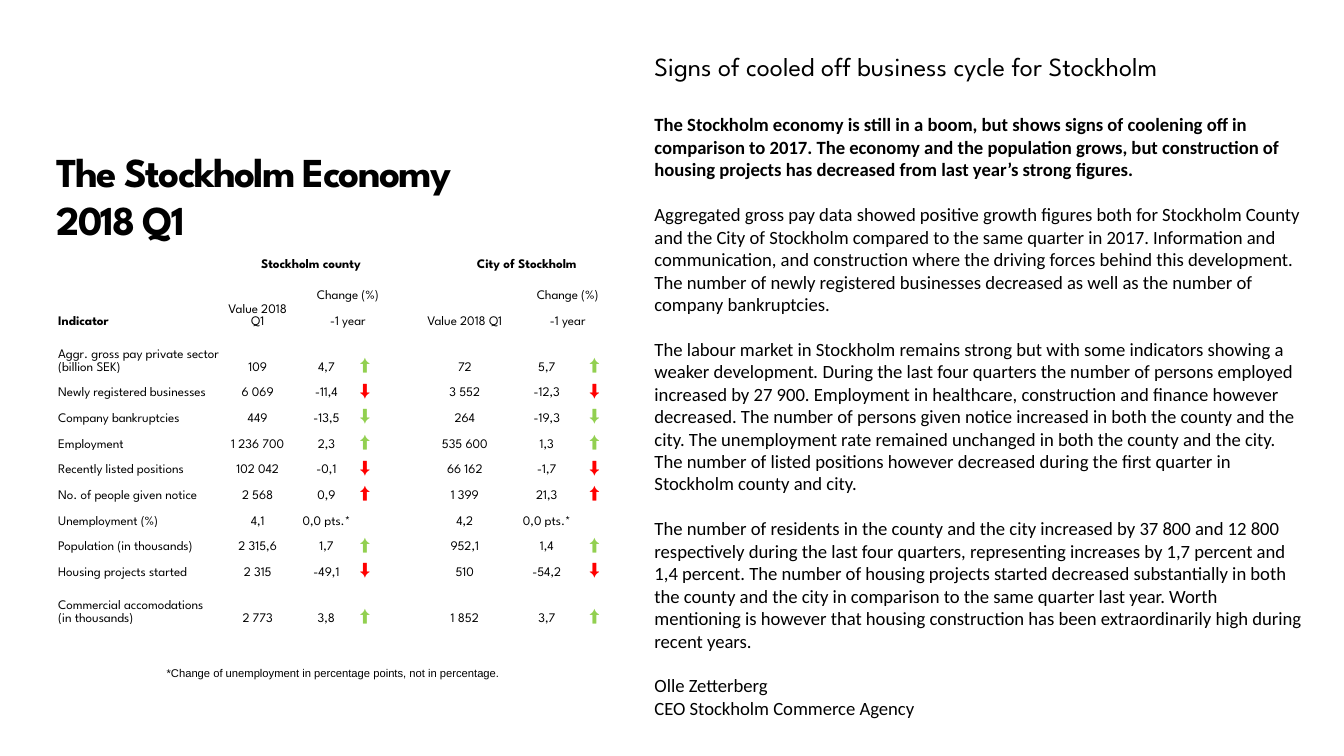
from dataclasses import dataclass

from pptx import Presentation
from pptx import util as u
from pptx.dml.color import RGBColor
from pptx.enum import text


@dataclass(frozen=True)
class Theme:
    black: RGBColor = RGBColor(0, 0, 0)
    good: RGBColor = RGBColor(0x92, 0xD0, 0x50)
    bad: RGBColor = RGBColor(0xFF, 0, 0)
    display: str = "League Spartan"
    body: str = "Calibri"
    plain: str = "Arial"
    title_size: int = 22
    heading_size: int = 14
    body_size: int = 10
    arrow_size: int = 9
    table_size: int = 7
    note_size: int = 6


theme = Theme()


def add_run(paragraph, words, font, size, color=theme.black, bold=False, italic=False):
    run = paragraph.add_run()
    run.text = words
    run.font.name, run.font.size = font, u.Pt(size)
    run.font.color.rgb = color
    run.font.bold, run.font.italic = bold, italic
    return run


def fill_cell(cell, words="", bold=False, align=text.PP_ALIGN.CENTER,
              anchor=text.MSO_ANCHOR.BOTTOM, font=theme.display,
              size=theme.table_size, color=theme.black):
    cell.vertical_anchor = anchor
    paragraph = cell.text_frame.paragraphs[0]
    paragraph.alignment = align
    if words:
        add_run(paragraph, words, font, size, color, bold)


prs = Presentation()
prs.slide_width, prs.slide_height = u.Cm(25.4), u.Cm(14.28)
slide = prs.slides.add_slide(prs.slide_layouts[5])
LEFT = text.PP_ALIGN.LEFT

# Title
title = slide.shapes.title
title.left, title.top, title.width, title.height = u.Cm(1.07), u.Cm(2.79), u.Cm(15.77), u.Cm(2.03)
title_frame = title.text_frame
title_frame.auto_size = text.MSO_AUTO_SIZE.NONE
title_frame.vertical_anchor = text.MSO_ANCHOR.TOP
title_frame.margin_left = title_frame.margin_right = 0
title_frame.margin_top = title_frame.margin_bottom = 0
for index, words in enumerate(["The Stockholm Economy", "2018 Q1"]):
    line = title_frame.add_paragraph() if index else title_frame.paragraphs[0]
    line.alignment = LEFT
    line.line_spacing = u.Pt(25.7)
    run = add_run(line, words, theme.display, theme.title_size, bold=True)
    run.font._element.set("spc", "-90")

# Footnote under the table
note = slide.shapes.add_textbox(u.Cm(3.15), u.Cm(11.99), u.Cm(6.5), u.Cm(0.89)).text_frame
note.word_wrap = True
note.margin_left = note.margin_right = note.margin_top = note.margin_bottom = 0
note.paragraphs[0].line_spacing = u.Pt(24)
add_run(note.paragraphs[0], "*Change of unemployment in percentage points, not in percentage.",
        theme.plain, theme.note_size)

# Indicators: name, then value, change and arrow for county and for city, then arrow colour
indicators = [
    ("Aggr. gross pay private sector (billion SEK)", "109", "4,7", "72", "5,7", "⬆", theme.good),
    ("Newly registered businesses", "6 069", "-11,4", "3 552", "-12,3", "⬇", theme.bad),
    ("Company bankruptcies", "449", "-13,5", "264", "-19,3", "⬇", theme.good),
    ("Employment", "1 236 700", "2,3", "535 600", "1,3", "⬆", theme.good),
    ("Recently listed positions", "102 042", "-0,1", "66 162", "-1,7", "⬇", theme.bad),
    ("No. of people given notice", "2 568", "0,9", "1 399", "21,3", "⬆", theme.bad),
    ("Unemployment (%)", "4,1", "0,0 pts.*", "4,2", "0,0 pts.*", "", theme.black),
    ("Population (in thousands)", "2 315,6", "1,7", "952,1", "1,4", "⬆", theme.good),
    ("Housing projects started", "2 315", "-49,1", "510", "-54,2", "⬇", theme.bad),
    ("Commercial accomodations (in thousands)", "2 773", "3,8", "1 852", "3,7", "⬆", theme.good),
]
column_widths = [3.1, 1.4, 1.2, 0.81, 0.43, 1.55, 1.55, 0.79]
header_rows = 3
row_count = header_rows + len(indicators)
tall_rows, tall, table_height = (header_rows, row_count - 1), 0.86, 7.06
short = (table_height - len(tall_rows) * tall) / (row_count - len(tall_rows))

# Table grid
table = slide.shapes.add_table(row_count, len(column_widths), u.Cm(1.07), u.Cm(4.75),
                               u.Cm(sum(column_widths)), u.Cm(table_height)).table
table.first_row = table.horz_banding = False
for column, width in zip(table.columns, column_widths):
    column.width = u.Cm(width)
for index, row in enumerate(table.rows):
    row.height = u.Cm(tall if index in tall_rows else short)
    for cell in row.cells:
        cell.fill.background()
        cell.margin_left = cell.margin_right = cell.margin_top = u.Cm(0.03)
        cell.margin_bottom = 0
        # Empty cells must not stretch their row
        end = cell.text_frame.paragraphs[0]._p.get_or_add_endParaRPr()
        end.set("sz", str(theme.table_size * 100))

# Table header
table.cell(1, 0).merge(table.cell(2, 0))
fill_cell(table.cell(1, 0), "Indicator", bold=True, align=LEFT)
for first, region in [(1, "Stockholm county"), (5, "City of Stockholm")]:
    table.cell(0, first).merge(table.cell(0, first + 2))
    table.cell(1, first).merge(table.cell(2, first))
    fill_cell(table.cell(0, first), region, bold=True, anchor=text.MSO_ANCHOR.MIDDLE)
    fill_cell(table.cell(1, first), "Value 2018 Q1")
    for row, words in [(1, "Change (%)"), (2, "-1 year")]:
        table.cell(row, first + 1).merge(table.cell(row, first + 2))
        fill_cell(table.cell(row, first + 1), words)

# Table body
for row, (name, county, county_change, city, city_change, arrow, color) in enumerate(
        indicators, header_rows):
    fill_cell(table.cell(row, 0), name, align=LEFT)
    for first, value, change in [(1, county, county_change), (5, city, city_change)]:
        fill_cell(table.cell(row, first), value)
        fill_cell(table.cell(row, first + 1), change)
        fill_cell(table.cell(row, first + 2), arrow, align=LEFT,
                  font=theme.plain, size=theme.arrow_size, color=color)

# Article heading
article = slide.shapes.add_textbox(u.Cm(12.17), u.Cm(0.74), u.Cm(12.7), u.Cm(13.13)).text_frame
article.word_wrap = True
article.margin_left = article.margin_right = u.Cm(0.2)
article.margin_top = article.margin_bottom = u.Cm(0.2)
heading = article.paragraphs[0]
heading.line_spacing = u.Pt(17)
add_run(heading, "Signs of cooled off business cycle for Stockholm", theme.display, theme.heading_size)

# Article paragraphs: space before, then runs with their style
story = [
    (17, [("The Stockholm economy is still in a boom, but shows signs of coolening off in comparison "
           "to 2017. The economy and the population grows, but construction of housing projects has "
           "decreased from last year’s strong figures.", {"bold": True})]),
    (12, [("Aggregated gross pay data showed positive growth figures both for Stockholm County and "
           "the City of Stockholm compared to the same quarter in 2017. Information and "
           "communication, and construction where the driving forces behind this development. The "
           "number of newly registered businesses decreased as well as the number of company "
           "bankruptcies.", {})]),
    (12, [("The labour market in Stockholm remains strong but with some indicators showing a weaker "
           "development", {}),
          (". ", {"italic": True}),
          ("During the last four quarters the number of persons employed increased by 27 900. "
           "Employment in healthcare, construction and finance however decreased. The number of "
           "persons given notice increased in both the county and the city. The unemployment rate "
           "remained unchanged in both the county and the city. The number of listed positions "
           "however decreased during the first quarter in Stockholm county and city.", {})]),
    (12, [("The number of residents in the county and the city increased by 37 800 and 12 800 "
           "respectively during the last four quarters, representing increases by 1,7 percent and "
           "1,4 percent. The number of housing projects started decreased substantially in both the "
           "county and the city in comparison to the same quarter last year. Worth mentioning is "
           "however that housing construction has been extraordinarily high during recent years.",
           {})]),
    (12, [("Olle Zetterberg", {})]),
    (0, [("CEO Stockholm Commerce Agency", {})]),
]
for space, runs in story:
    paragraph = article.add_paragraph()
    paragraph.space_before = u.Pt(space)
    for words, style in runs:
        add_run(paragraph, words, theme.body, theme.body_size, **style)

prs.save("out.pptx")
